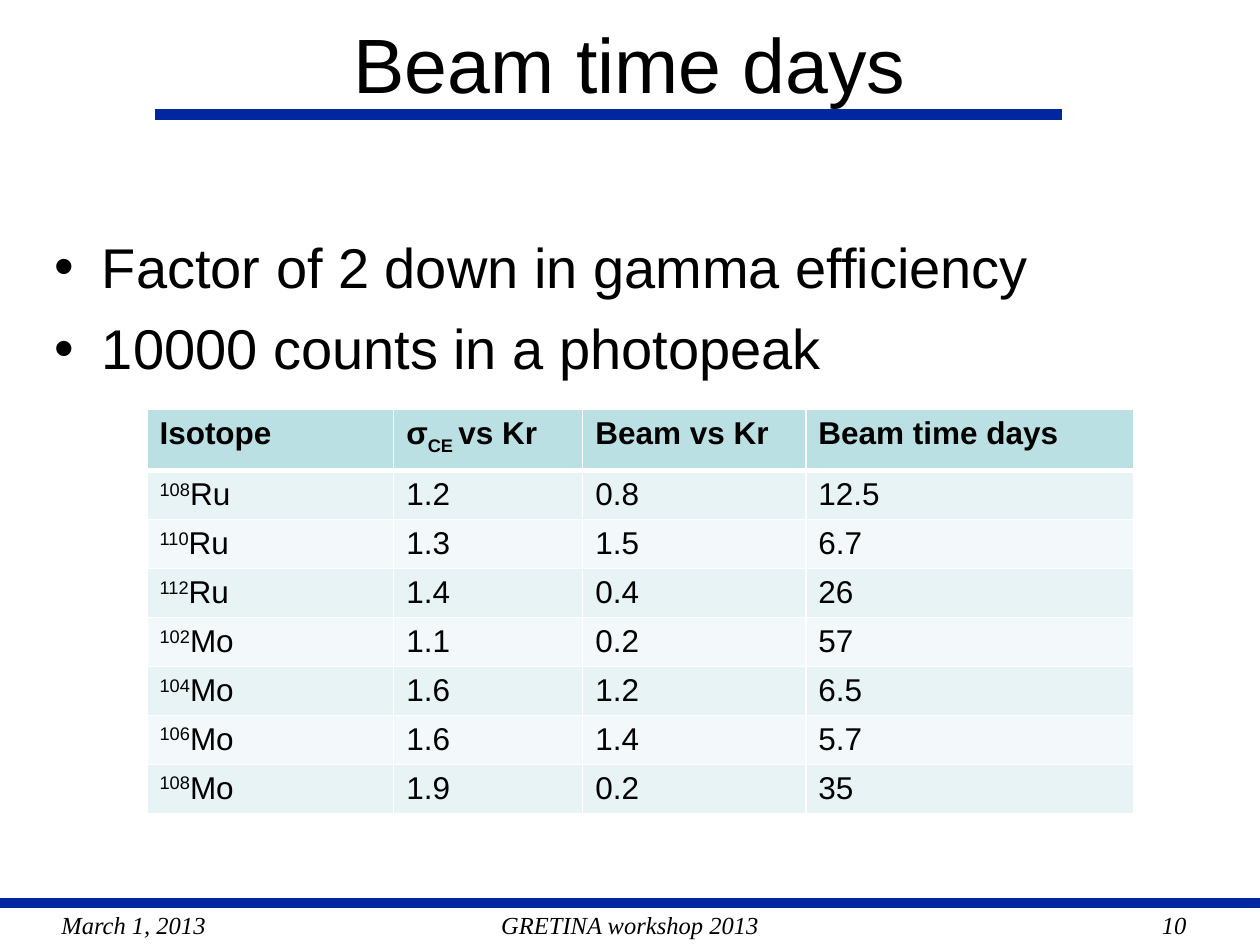
from lxml import etree
from pptx import Presentation
from pptx.dml.color import RGBColor
from pptx.enum.shapes import MSO_CONNECTOR
from pptx.enum.text import MSO_ANCHOR, MSO_AUTO_SIZE, PP_ALIGN
from pptx.oxml.ns import qn
from pptx.util import Pt

STRAIGHT = MSO_CONNECTOR.STRAIGHT
TOP = MSO_ANCHOR.TOP
NO_FIT = MSO_AUTO_SIZE.NONE
LEFT, CENTER, RIGHT = PP_ALIGN.LEFT, PP_ALIGN.CENTER, PP_ALIGN.RIGHT

BLACK, WHITE, RULE_BLUE = "000000", "FFFFFF", "00279F"
HEADER_FILL = "BBE0E3"
BAND_FILLS = ["E7F3F4", "F3F9FA"]
SUBSCRIPT, SUPERSCRIPT = -25, 30

BULLETS = ["Factor of 2 down in gamma efficiency", "10000 counts in a photopeak"]
COLUMN_WIDTHS = [141, 108, 127.5, 187.5]
HEADER_HEIGHT, ROW_HEIGHT = 35, 28
HEADERS = [
    [("Isotope", 0)],
    [("σ", 0), ("CE ", SUBSCRIPT), ("vs Kr", 0)],
    [("Beam vs Kr", 0)],
    [("Beam time days", 0)],
]
ISOTOPES = [
    ("108", "Ru", "1.2", "0.8", "12.5"),
    ("110", "Ru", "1.3", "1.5", "6.7"),
    ("112", "Ru", "1.4", "0.4", "26"),
    ("102", "Mo", "1.1", "0.2", "57"),
    ("104", "Mo", "1.6", "1.2", "6.5"),
    ("106", "Mo", "1.6", "1.4", "5.7"),
    ("108", "Mo", "1.9", "0.2", "35"),
]


def color(value):
    return RGBColor.from_string(value)


def add_span(para, text, size, font="Arial", bold=False, italic=False, baseline=0):
    span = para.add_run()
    span.text = text
    span.font.name = font
    span.font.size = Pt(size)
    span.font.bold = bold
    span.font.italic = italic
    span.font.color.rgb = color(BLACK)
    if baseline:
        span.font._element.set("baseline", str(baseline * 1000))


def place(shape, left, top, width, height, inset_top):
    """Move a text shape and fix its frame to top anchoring."""
    shape.left, shape.top = Pt(left), Pt(top)
    shape.width, shape.height = Pt(width), Pt(height)
    frame = shape.text_frame
    frame.word_wrap = True
    frame.auto_size = NO_FIT
    frame.vertical_anchor = TOP
    frame.margin_top = Pt(inset_top)
    return frame


def add_rule(page, left, right, y):
    rule = page.shapes.add_connector(STRAIGHT, Pt(left), Pt(y), Pt(right), Pt(y))
    rule.line.color.rgb = color(RULE_BLUE)
    rule.line.width = Pt(6)
    etree.SubElement(rule._element.spPr, qn("a:effectLst"))


def add_title(page, left, top, width, height):
    add_rule(page, left + 52.5, left + 571, top + 64)
    frame = place(page.shapes.title, left, top, width, height, 8)
    para = frame.paragraphs[0]
    para.alignment = CENTER
    add_span(para, "Beam time days", 44)


def add_bullets(page, left, top, width, height):
    frame = place(page.placeholders[1], left, top, width, height, 7)
    for index, text in enumerate(BULLETS):
        para = frame.add_paragraph() if index else frame.paragraphs[0]
        para.space_before = Pt(8 if index else 0)
        add_span(para, text, 32)


def set_borders(cell, widths):
    properties = cell._tc.get_or_add_tcPr()
    for index, (side, width) in enumerate(widths.items()):
        line = etree.Element(qn(f"a:ln{side}"), w=str(Pt(width)))
        fill = etree.SubElement(line, qn("a:solidFill"))
        etree.SubElement(fill, qn("a:srgbClr"), val=WHITE)
        properties.insert(index, line)


def add_isotope_table(page, left, top):
    rows = [HEADERS]
    for mass, element, *values in ISOTOPES:
        rows.append([[(mass, SUPERSCRIPT), (element, 0)]] + [[(value, 0)] for value in values])
    heights = [HEADER_HEIGHT] + [ROW_HEIGHT] * len(ISOTOPES)
    table = page.shapes.add_table(
        len(rows), len(HEADERS), Pt(left), Pt(top), Pt(sum(COLUMN_WIDTHS)), Pt(sum(heights))
    ).table
    for column, width in zip(table.columns, COLUMN_WIDTHS):
        column.width = Pt(width)
    for index, (row, height) in enumerate(zip(rows, heights)):
        table.rows[index].height = Pt(height)
        is_header = index == 0
        fill = HEADER_FILL if is_header else BAND_FILLS[(index - 1) % 2]
        for cell, spans in zip(table.rows[index].cells, row):
            cell.fill.solid()
            cell.fill.fore_color.rgb = color(fill)
            set_borders(cell, {"L": 1, "R": 1, "T": 3 if index == 1 else 1, "B": 3 if is_header else 1})
            para = cell.text_frame.paragraphs[0]
            for text, baseline in spans:
                add_span(para, text, 18, bold=is_header, baseline=baseline)


def add_footer(page, left, top, width, height):
    add_rule(page, left, left + width, top)
    parts = [
        ("March 1, 2013", 28, 150, LEFT),
        ("GRETINA workshop 2013", 228, 264, CENTER),
        ("10", 535, 150, RIGHT),
    ]
    for text, offset, part_width, alignment in parts:
        box = page.shapes.add_textbox(0, 0, 0, 0)
        frame = place(box, left + offset, top, part_width, height, 4)
        para = frame.paragraphs[0]
        para.alignment = alignment
        add_span(para, text, 14, font="Times New Roman", italic=True)


def main():
    deck = Presentation()
    deck.slide_width, deck.slide_height = Pt(720), Pt(540)
    page = deck.slides.add_slide(deck.slide_layouts[1])
    page.background.fill.solid()
    page.background.fill.fore_color.rgb = color(WHITE)
    add_footer(page, 0, 516, 720, 18)
    add_title(page, 36, 1.5, 648, 90)
    add_bullets(page, 24, 126, 660, 120)
    add_isotope_table(page, 84, 234)
    deck.save("out.pptx")


if __name__ == "__main__":
    main()
